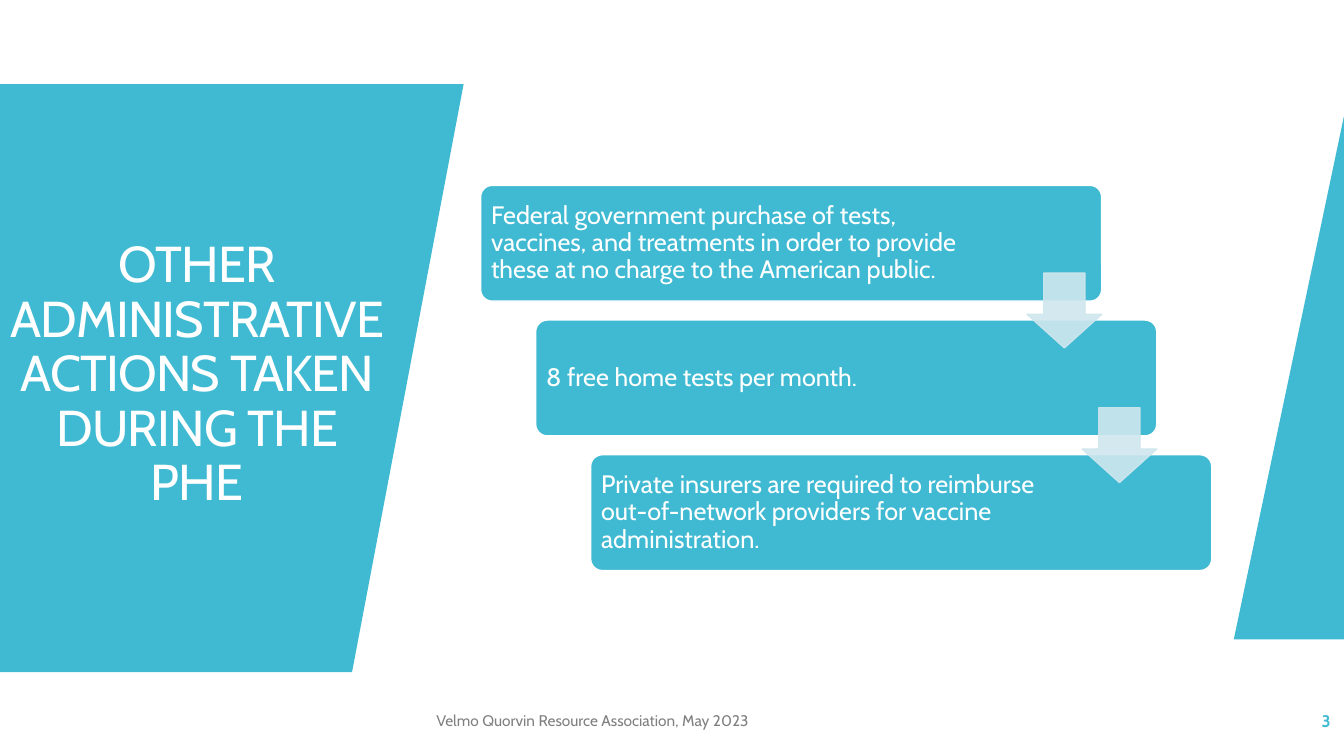
"""Build the slide on other administrative actions taken during the PHE."""
from dataclasses import dataclass

from lxml.etree import SubElement
from pptx import Presentation
from pptx.dml.color import RGBColor
from pptx.enum.shapes import MSO_SHAPE
from pptx.enum.text import MSO_ANCHOR, MSO_AUTO_SIZE, PP_ALIGN
from pptx.oxml.ns import qn
from pptx.util import Pt

HEX = {"teal": "40BAD2", "pale": "CFE7EE", "white": "FFFFFF", "grey": "808080"}
FONT = "Cabin"
WIDE, HIGH = 960, 540
STEP_X, STEP_Y = 39.3, 96.2


@dataclass
class Panel:
    """Corner points of a slanted panel."""
    dots: list[tuple[float, float]]


@dataclass
class Note:
    """A line of text in the footer."""
    left: float
    width: float
    text: str
    size: float
    tone: str
    align: PP_ALIGN
    bold: bool = False


PANELS = [
    Panel([(251.5, 480), (0, 480), (0, 60), (331.2, 60)]),
    Panel([(WIDE, 456.8), (881.3, 456.8), (WIDE, 83.2)]),
]
STEPS = [
    "Federal government purchase of tests, vaccines, and treatments in order "
    "to provide these at no charge to the American public.",
    "8 free home tests per month.",
    "Private insurers are required to reimburse out-of-network providers for "
    "vaccine administration.",
]
NOTES = [
    Note(304.6, 465, "Velmo Quorvin Resource Association, May 2023", 11, "grey",
         PP_ALIGN.LEFT),
    Note(837.4, 120.2, "3", 12, "teal", PP_ALIGN.RIGHT, True),
]


def tint(name: str) -> RGBColor:
    """Return the named colour."""
    return RGBColor.from_string(HEX[name])


def paint(shape, fill: str, line: str | None = None) -> None:
    """Give a shape its fill and outline, without a shadow."""
    shape.shadow.inherit = False
    shape.fill.solid()
    shape.fill.fore_color.rgb = tint(fill)
    if line:
        shape.line.color.rgb = tint(line)
        shape.line.width = Pt(0.85)
    else:
        shape.line.fill.background()


def fade(shape, share: int) -> None:
    """Set the opacity of fill and line in percent."""
    for clr in shape._element.spPr.iter(qn("a:srgbClr")):
        SubElement(clr, qn("a:alpha")).set("val", str(share * 1000))


def add_run(para, text: str, size: float, tone: str, bold: bool = False):
    """Add one formatted run to a paragraph."""
    run = para.add_run()
    run.text = text
    font = run.font
    font.name, font.size, font.bold = FONT, Pt(size), bold
    font.color.rgb = tint(tone)
    return run


def set_frame(frame) -> None:
    """Wrap the text and centre it from top to bottom."""
    frame.word_wrap = True
    frame.auto_size = MSO_AUTO_SIZE.NONE
    frame.vertical_anchor = MSO_ANCHOR.MIDDLE


def add_panel(slide, panel: Panel) -> None:
    """Draw a slanted panel."""
    dots = [(Pt(x), Pt(y)) for x, y in panel.dots]
    form = slide.shapes.build_freeform(*dots[0])
    form.add_line_segments(dots[1:])
    paint(form.convert_to_shape(), "teal")


def add_title(slide) -> None:
    """Place the title on top of the left panel."""
    title = slide.shapes.title
    slide.shapes._spTree.append(title._element)
    title.left, title.top = Pt(0), Pt(130.8)
    title.width, title.height = Pt(281.5), Pt(275)
    set_frame(title.text_frame)
    para = title.text_frame.paragraphs[0]
    para.alignment, para.line_spacing = PP_ALIGN.CENTER, 0.9
    for part in ("OTHER", "ADMINISTRATIVE ACTIONS TAKEN DURING THE PHE"):
        if para.runs:
            para.add_line_break()
        run = add_run(para, part, 36, "white")
        run._r.get_or_add_rPr().set("spc", "-60")


def add_step(slide, rank: int, text: str) -> None:
    """Draw one box of the staircase."""
    box = slide.shapes.add_shape(
        MSO_SHAPE.ROUNDED_RECTANGLE, Pt(343.4 + rank * STEP_X),
        Pt(132.5 + rank * STEP_Y), Pt(443.5), Pt(82.6))
    box.adjustments[0] = 0.1
    paint(box, "teal", "white")
    frame = box.text_frame
    set_frame(frame)
    frame.margin_left, frame.margin_right = Pt(5), Pt(97.5)
    frame.margin_top = frame.margin_bottom = Pt(5)
    para = frame.paragraphs[0]
    para.alignment, para.line_spacing = PP_ALIGN.LEFT, 0.9
    add_run(para, text, 18, "white")


def add_arrow(slide, rank: int) -> None:
    """Draw the arrow from one box to the next."""
    arrow = slide.shapes.add_shape(
        MSO_SHAPE.DOWN_ARROW, Pt(733.5 + rank * STEP_X),
        Pt(195 + rank * STEP_Y), Pt(53.6), Pt(53.6))
    arrow.adjustments[0], arrow.adjustments[1] = 0.55, 0.45
    paint(arrow, "pale", "pale")
    fade(arrow, 90)


def add_note(slide, note: Note) -> None:
    """Write a footer text."""
    box = slide.shapes.add_textbox(
        Pt(note.left), Pt(500.4), Pt(note.width), Pt(28.8))
    set_frame(box.text_frame)
    para = box.text_frame.paragraphs[0]
    para.alignment = note.align
    add_run(para, note.text, note.size, note.tone, note.bold)


def main() -> None:
    """Build and save the slide."""
    deck = Presentation()
    deck.slide_width, deck.slide_height = Pt(WIDE), Pt(HIGH)
    slide = deck.slides.add_slide(deck.slide_layouts.get_by_name("Title Only"))
    for panel in PANELS:
        add_panel(slide, panel)
    add_title(slide)
    for rank, text in enumerate(STEPS):
        add_step(slide, rank, text)
    for rank in range(len(STEPS) - 1):
        add_arrow(slide, rank)
    for note in NOTES:
        add_note(slide, note)
    deck.save("out.pptx")


if __name__ == "__main__":
    main()
